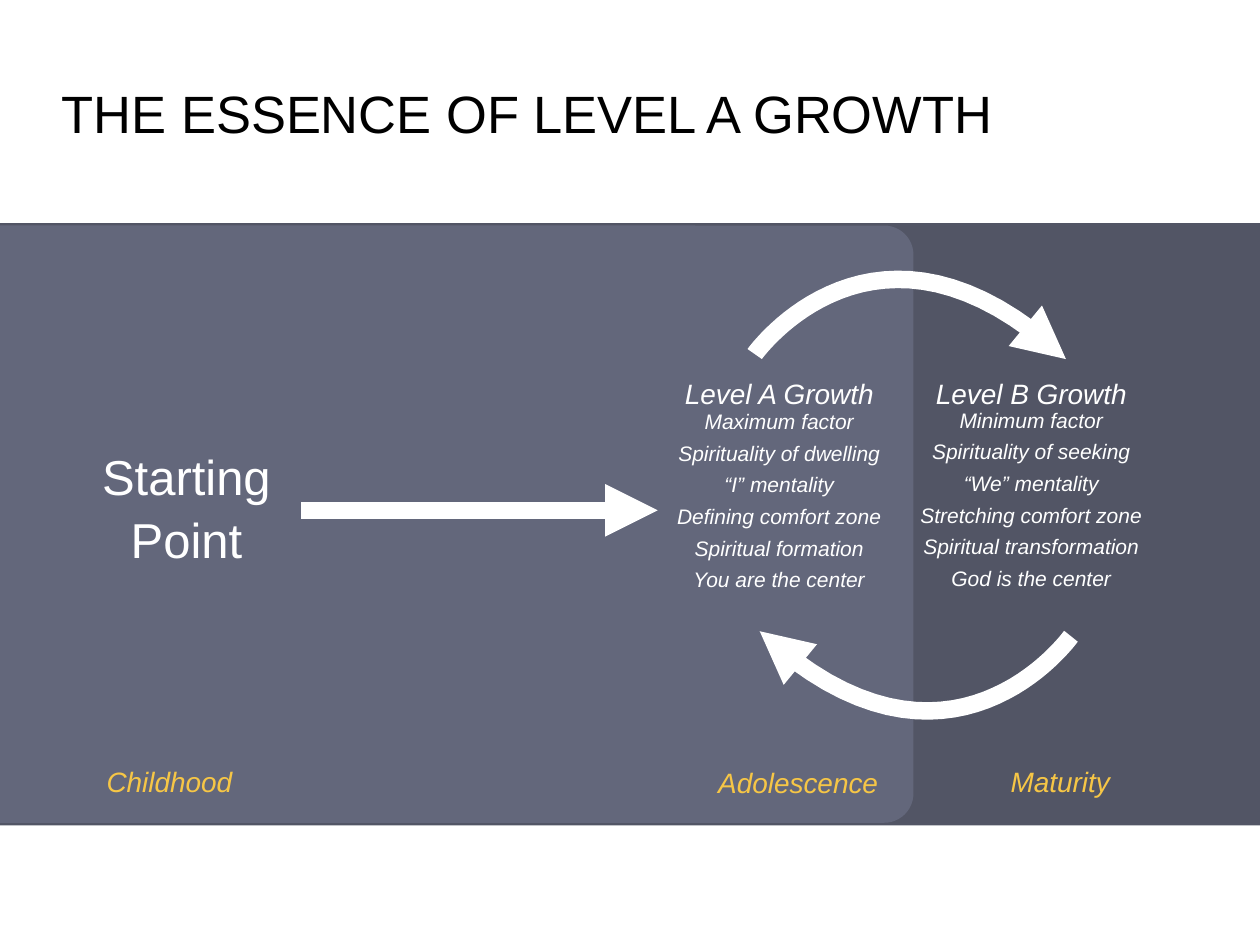
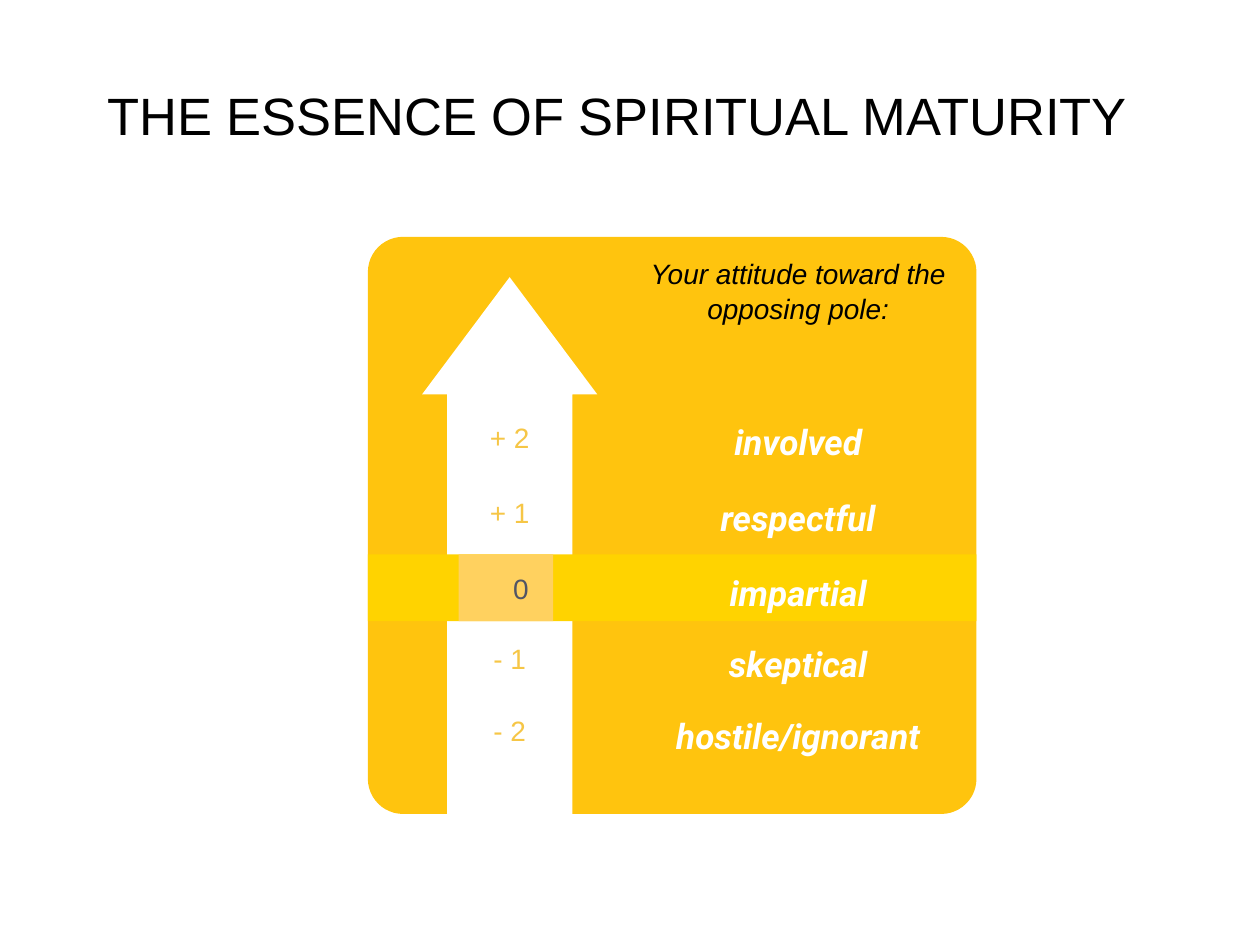
from dataclasses import dataclass

from lxml import etree
from pptx import Presentation
from pptx.dml.color import RGBColor
from pptx.enum.shapes import MSO_CONNECTOR, MSO_SHAPE
from pptx.enum.text import MSO_ANCHOR, PP_ALIGN
from pptx.oxml.ns import qn
from pptx.util import Inches, Pt

RECT = MSO_SHAPE.RECTANGLE
ROUND = MSO_SHAPE.ROUNDED_RECTANGLE
ARROW = MSO_SHAPE.UP_ARROW
LINE = MSO_CONNECTOR.STRAIGHT
LEFT, CENTER = PP_ALIGN.LEFT, PP_ALIGN.CENTER
TOP, MIDDLE = MSO_ANCHOR.TOP, MSO_ANCHOR.MIDDLE


@dataclass(frozen=True)
class Theme:
    sans: str = "Arial"
    bold: str = "Roboto"
    white: str = "FFFFFF"
    black: str = "000000"
    slate: str = "525565"
    panel: str = "63677B"
    amber: str = "F6C646"
    gold: str = "FFC40E"
    lemon: str = "FFD300"
    sand: str = "FFD15F"
    title: int = 30
    lead: int = 28
    word: int = 20
    label: int = 16
    note: int = 12
    stroke: int = 10
    inset: float = 0.05
    spacing: float = 1.06
    tight: float = 0.63


@dataclass(frozen=True)
class Box:
    x: float
    y: float
    w: float
    h: float

    def sub(self, x, y, w, h):
        return Box(self.x + x, self.y + y, w, h)

    def emu(self):
        return [Inches(v) for v in (self.x, self.y, self.w, self.h)]


THEME = Theme()


def color(code):
    return RGBColor.from_string(code)


def style(frame, text, size, tint, font=THEME.sans, bold=False, italic=False,
          align=CENTER, anchor=TOP, gap=0, spacing=THEME.spacing):
    frame.text = text
    frame.word_wrap = True
    frame.vertical_anchor = anchor
    inset = Inches(THEME.inset)
    frame.margin_left = frame.margin_right = inset
    frame.margin_top = frame.margin_bottom = inset
    for index, para in enumerate(frame.paragraphs):
        para.alignment = align
        para.line_spacing = spacing
        para.space_before = Pt(gap if index else 0)
        for run in para.runs:
            run.font.name = font
            run.font.size = Pt(size)
            run.font.bold = bold
            run.font.italic = italic
            run.font.color.rgb = color(tint)


def label(slide, box, text, size, tint, **opts):
    area = slide.shapes.add_textbox(*box.emu())
    style(area.text_frame, text, size, tint, **opts)


def block(slide, kind, box, tint, *adjust):
    shape = slide.shapes.add_shape(kind, *box.emu())
    shape.shadow.inherit = False
    shape.fill.solid()
    shape.fill.fore_color.rgb = color(tint)
    shape.line.fill.background()
    for index, value in enumerate(adjust):
        shape.adjustments[index] = value


def arrow(shape):
    shape.line.color.rgb = color(THEME.white)
    shape.line.width = Pt(THEME.stroke)
    tail = etree.SubElement(shape.line._get_or_add_ln(), qn("a:tailEnd"))
    tail.set("type", "triangle")


def straight(slide, x, y, end):
    line = slide.shapes.add_connector(
        LINE, Inches(x), Inches(y), Inches(end), Inches(y))
    arrow(line)
    etree.SubElement(line._element.spPr, qn("a:effectLst"))


def curve(slide, start, bend, end, steps=32):
    points = []
    for step in range(steps + 1):
        t = step / steps
        u = 1 - t
        points.append(tuple(
            Inches((u ** 3 + 3 * u * u * t) * a + 3 * u * t * t * b + t ** 3 * c)
            for a, b, c in zip(start, bend, end)))
    pen = slide.shapes.build_freeform(*points[0], scale=1.0)
    pen.add_line_segments(points[1:], close=False)
    shape = pen.convert_to_shape()
    shape.shadow.inherit = False
    shape.fill.background()
    arrow(shape)


def page(deck, title, box):
    slide = deck.slides.add_slide(deck.slide_layouts[5])
    head = slide.shapes.title
    head.left, head.top, head.width, head.height = box.emu()
    style(head.text_frame, title, THEME.title, THEME.black,
          align=LEFT, anchor=MIDDLE)
    return slide


def band(slide, box):
    block(slide, RECT, box, THEME.slate)
    block(slide, ROUND, box.sub(-0.39, 0.02, 7.64, box.h - 0.04),
          THEME.panel, 0.049)
    label(slide, box.sub(0.28, 1.7, 2.4, 1.07), "Starting Point",
          THEME.lead, THEME.white)
    straight(slide, box.x + 2.39, box.y + 2.28, box.x + 5.22)
    stages = (("Childhood", -0.19, 4.23), ("Adolescence", 4.8, 4.24),
              ("Maturity", 6.88, 4.23))
    for name, x, y in stages:
        label(slide, box.sub(x, y, 3.07, 0.38), name,
              THEME.label, THEME.amber, italic=True)


def level(slide, box, name, traits, shift, drop):
    label(slide, box, name, THEME.label, THEME.white, italic=True)
    label(slide, box.sub(shift, drop, box.w - 2 * shift, 1.6),
          "\n".join(traits), THEME.note, THEME.white,
          italic=True, gap=9, spacing=THEME.tight)


def cycle(slide, box):
    level(slide, box.sub(0, 0.92, 3.07, 0.38), "Level A Growth",
          ("Maximum factor", "Spirituality of dwelling", "“I” mentality",
           "Defining comfort zone", "Spiritual formation",
           "You are the center"), 0.2, 0.34)
    level(slide, box.sub(2, 0.92, 3.07, 0.38), "Level B Growth",
          ("Minimum factor", "Spirituality of seeking", "“We” mentality",
           "Stretching comfort zone", "Spiritual transformation",
           "God is the center"), 0.28, 0.33)
    route = ((1.34, 0.81), (2.31, -0.55), (3.81, 0.85))
    upper = [(box.x + x, box.y + y) for x, y in route]
    lower = [(box.x + box.w - x, box.y + box.h - y) for x, y in route]
    curve(slide, *upper)
    curve(slide, *lower)


def scale(slide, box):
    block(slide, ROUND, box, THEME.gold, 0.061)
    block(slide, ARROW, box.sub(0.43, 0.32, 1.39, 4.26), THEME.white,
          0.715, 0.669)
    block(slide, RECT, box.sub(0, 2.52, box.w, 0.53), THEME.lemon)
    block(slide, RECT, box.sub(0.72, 2.52, 0.75, 0.53), THEME.sand)
    label(slide, box.sub(2.13, 0.09, 2.57, 0.66),
          "Your attitude toward the opposing pole:",
          THEME.label, THEME.black, italic=True)
    rows = (("+ 2", "involved", 1.39), ("+ 1", "respectful", 1.99),
            ("0", "impartial", 2.59), ("- 1", "skeptical", 3.15),
            ("- 2", "hostile/ignorant", 3.72))
    for mark, word, y in rows:
        zero = mark == "0"
        label(slide, box.sub(0.89 if zero else 0.8, y, 0.65, 0.38), mark,
              THEME.label, THEME.slate if zero else THEME.amber)
        label(slide, box.sub(2.13, y, 2.57, 0.42), word, THEME.word,
              THEME.white, font=THEME.bold, bold=True, italic=True)


def main():
    deck = Presentation()
    deck.slide_width, deck.slide_height = Inches(10), Inches(7.5)
    growth = page(deck, "THE ESSENCE OF LEVEL A GROWTH",
                  Box(0.44, 0.25, 8.17, 1.25))
    band(growth, Box(0, 1.77, 10, 4.78))
    cycle(growth, Box(4.65, 2, 5.19, 3.86))
    mature = page(deck, "THE ESSENCE OF SPIRITUAL MATURITY",
                  Box(0.8, 0.27, 8.41, 1.25))
    scale(mature, Box(2.92, 1.88, 4.83, 4.58))
    deck.save("out.pptx")


if __name__ == "__main__":
    main()
